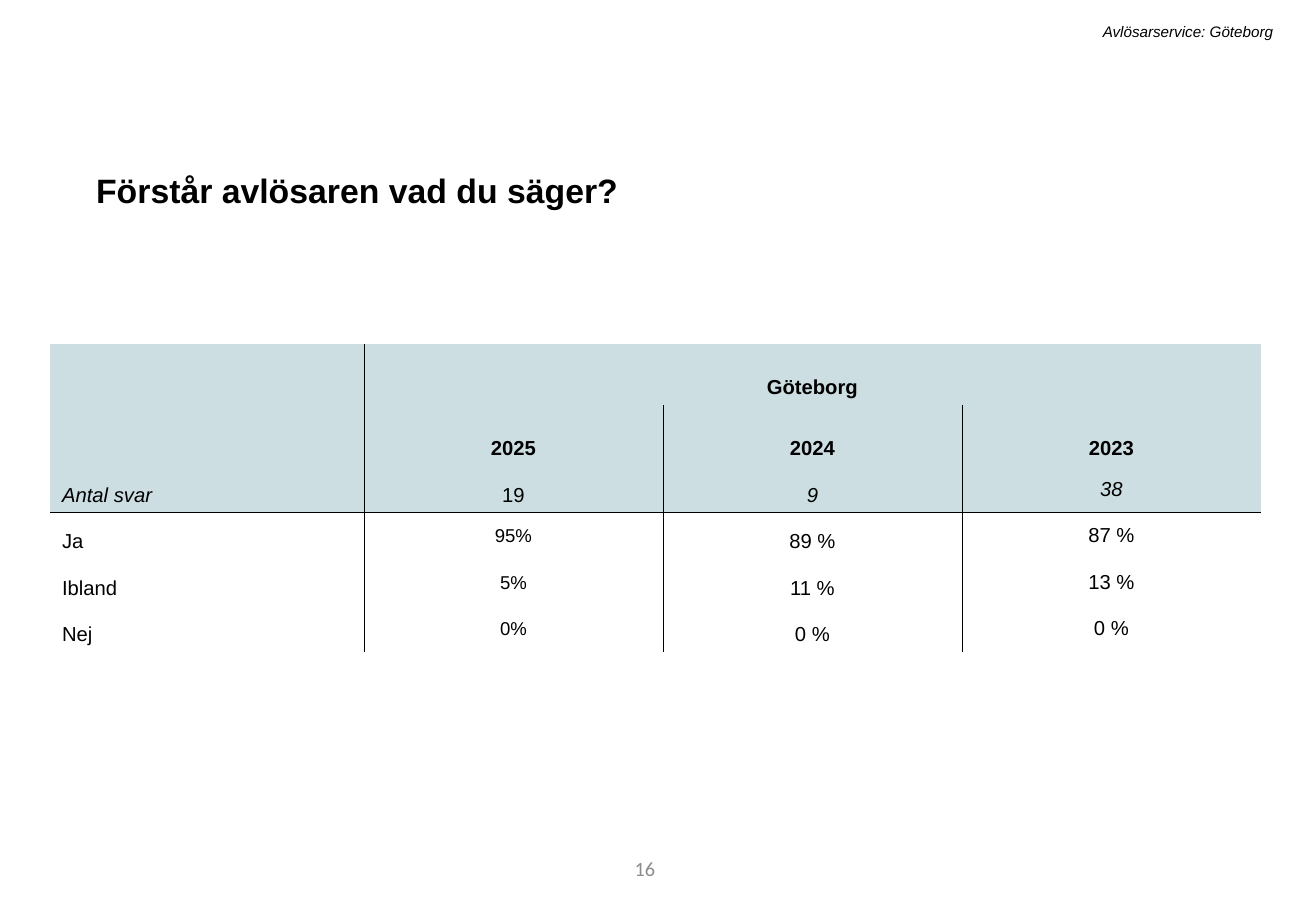
"""Build the survey slide on whether the respite carer understands the respondent."""
import dataclasses

import pptx
import pptx.dml.color
import pptx.enum.text
import pptx.oxml.ns
import pptx.util
from lxml import etree

ALIGN = pptx.enum.text.PP_ALIGN
ANCHOR = pptx.enum.text.MSO_ANCHOR
EMU_PER_PX = 7526


@dataclasses.dataclass(frozen=True)
class Theme:
    ink: str = "000000"
    muted: str = "8C8C8C"
    header_fill: str = "CCDEE1"
    body_font: str = "Arial"
    number_font: str = "Calibri"
    title_size: int = 20
    table_size: int = 12
    share_size: int = 11
    note_size: int = 9
    rule_width: float = 0.25
    row_spacing: float = 20.3


def px(length):
    return pptx.util.Emu(length * EMU_PER_PX)


class SlideBuilder:
    def __init__(self, presentation, theme):
        self.theme = theme
        self.slide = presentation.slides.add_slide(presentation.slide_layouts[5])

    def add_text(self, paragraph, text, size, align=ALIGN.LEFT, bold=False, italic=False,
                 color=None, font=None, spacing=None):
        paragraph.alignment = align
        if spacing:
            paragraph.line_spacing = spacing
        run = paragraph.add_run()
        run.text = text
        run.font.size = pptx.util.Pt(size)
        run.font.name = font or self.theme.body_font
        run.font.bold = bold
        run.font.italic = italic
        run.font.color.rgb = pptx.dml.color.RGBColor.from_string(color or self.theme.ink)

    def place(self, shape, left, top, width, height):
        shape.left, shape.top, shape.width, shape.height = map(px, (left, top, width, height))

    def title(self, box, text):
        heading = self.slide.shapes.title
        self.place(heading, *box)
        frame = heading.text_frame
        frame.auto_size = pptx.enum.text.MSO_AUTO_SIZE.NONE
        frame.vertical_anchor = ANCHOR.TOP
        paragraph = frame.paragraphs[0]
        paragraph.space_before = pptx.util.Pt(10)
        self.add_text(paragraph, text, self.theme.title_size, bold=True, spacing=1.2)

    def label(self, box, text, size, anchor=ANCHOR.TOP, **style):
        frame = self.slide.shapes.add_textbox(*map(px, box)).text_frame
        frame.word_wrap = True
        frame.vertical_anchor = anchor
        self.add_text(frame.paragraphs[0], text, size, ALIGN.RIGHT, **style)

    def borders(self, cell, ruled_sides):
        properties = cell._tc.get_or_add_tcPr()
        for side in "LRTB":
            line = etree.SubElement(properties, pptx.oxml.ns.qn(f"a:ln{side}"))
            if side in ruled_sides:
                line.set("w", str(pptx.util.Pt(self.theme.rule_width)))
                fill = etree.SubElement(line, pptx.oxml.ns.qn("a:solidFill"))
                etree.SubElement(fill, pptx.oxml.ns.qn("a:srgbClr"), val=self.theme.ink)
            else:
                etree.SubElement(line, pptx.oxml.ns.qn("a:noFill"))

    def answer_cell(self, cell, row, column, text):
        year_row, count_row = 1, 2
        heading = row <= year_row
        latest_share = row > count_row and column == 1
        sides = {
            "L": column == 1 or (column > 1 and row >= year_row),
            "R": column == 0 or (column < 3 and row >= year_row),
            "T": row == count_row + 1,
            "B": row == count_row,
        }
        self.borders(cell, [side for side, ruled in sides.items() if ruled])
        if row <= count_row:
            cell.fill.solid()
            cell.fill.fore_color.rgb = pptx.dml.color.RGBColor.from_string(self.theme.header_fill)
        else:
            cell.fill.background()
        if not text:
            return
        cell.vertical_anchor = ANCHOR.BOTTOM if heading else ANCHOR.MIDDLE
        if latest_share:
            cell.margin_left = cell.margin_right = cell.margin_top = px(1)
            cell.margin_bottom = 0
        exact = row >= year_row and column < 3 and not latest_share
        self.add_text(
            cell.text_frame.paragraphs[0], text,
            self.theme.share_size if latest_share else self.theme.table_size,
            ALIGN.CENTER if column else ALIGN.LEFT,
            bold=heading,
            italic=row == count_row and column != 1,
            spacing=pptx.util.Pt(self.theme.row_spacing) if exact else None,
        )

    def answer_table(self, left, top, widths, heights, answers):
        frame = self.slide.shapes.add_table(
            len(heights), len(widths), px(left), px(top), px(sum(widths)), px(sum(heights)))
        table = frame.table
        table.first_row = table.horz_banding = False
        for column, width in zip(table.columns, widths):
            column.width = px(width)
        for row, height in zip(table.rows, heights):
            row.height = px(height)
        table.cell(0, 1).merge(table.cell(0, len(widths) - 1))
        for row, texts in enumerate(answers):
            for column, text in enumerate(texts):
                self.answer_cell(table.cell(row, column), row, column, text)


def main():
    theme = Theme()
    presentation = pptx.Presentation()
    presentation.slide_width = px(1316)
    presentation.slide_height = px(911)
    builder = SlideBuilder(presentation, theme)
    builder.label((371, 844, 296, 49), "16", theme.table_size, ANCHOR.MIDDLE,
                  color=theme.muted, font=theme.number_font)
    builder.title((84, 156, 1142, 57), "Förstår avlösaren vad du säger?")
    answers = [
        ("", "Göteborg", "", ""),
        ("", "2025", "2024", "2023"),
        ("Antal svar", "19", "9", "38"),
        ("Ja", "95%", "89 %", "87 %"),
        ("Ibland", "5%", "11 %", "13 %"),
        ("Nej", "0%", "0 %", "0 %"),
    ]
    builder.answer_table(50, 344, [314] + [299] * 3, [61] * 2 + [46] * 4, answers)
    builder.label((209, 16, 1076, 30), "Avlösarservice: Göteborg", theme.note_size, italic=True)
    presentation.save("out.pptx")


if __name__ == "__main__":
    main()
